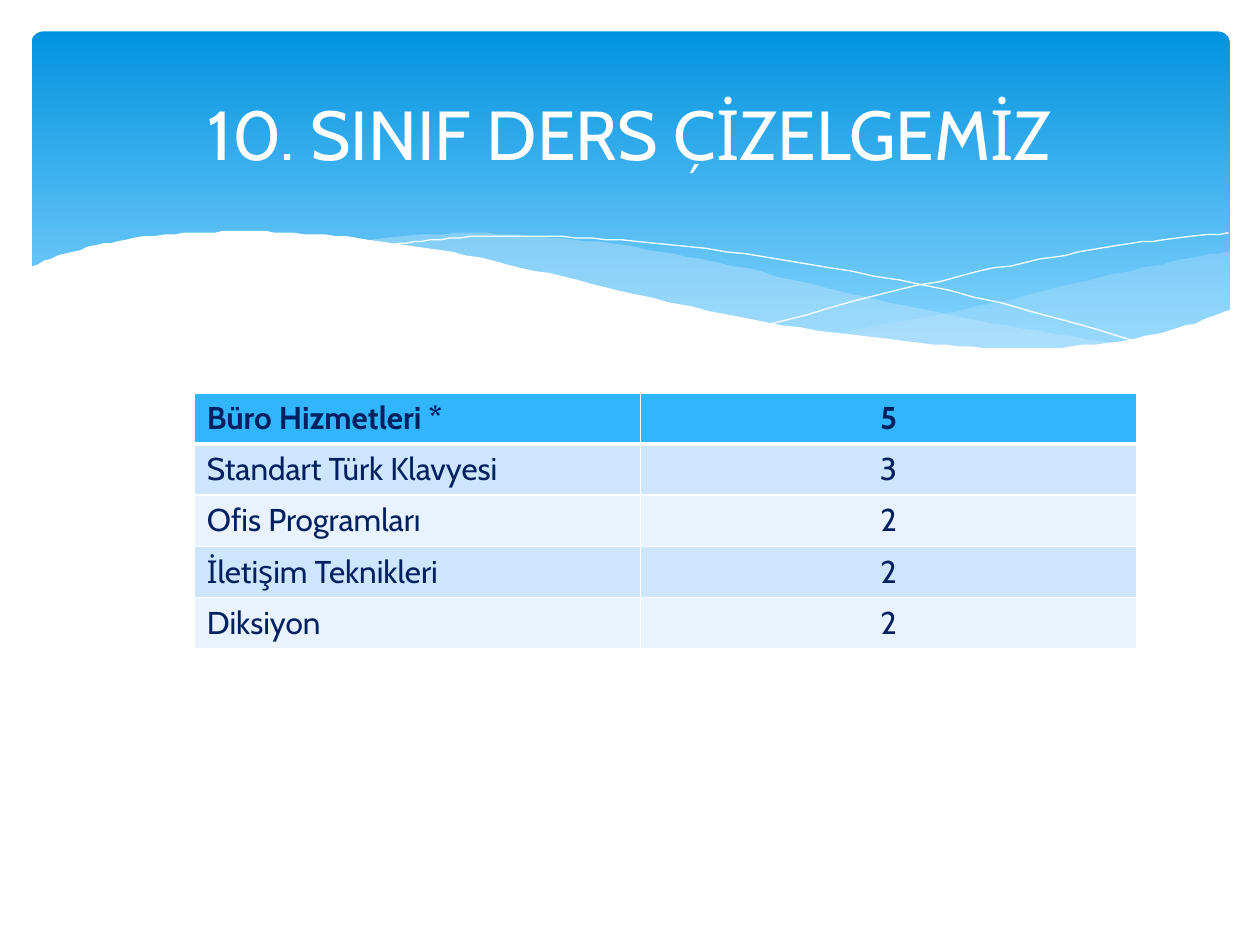
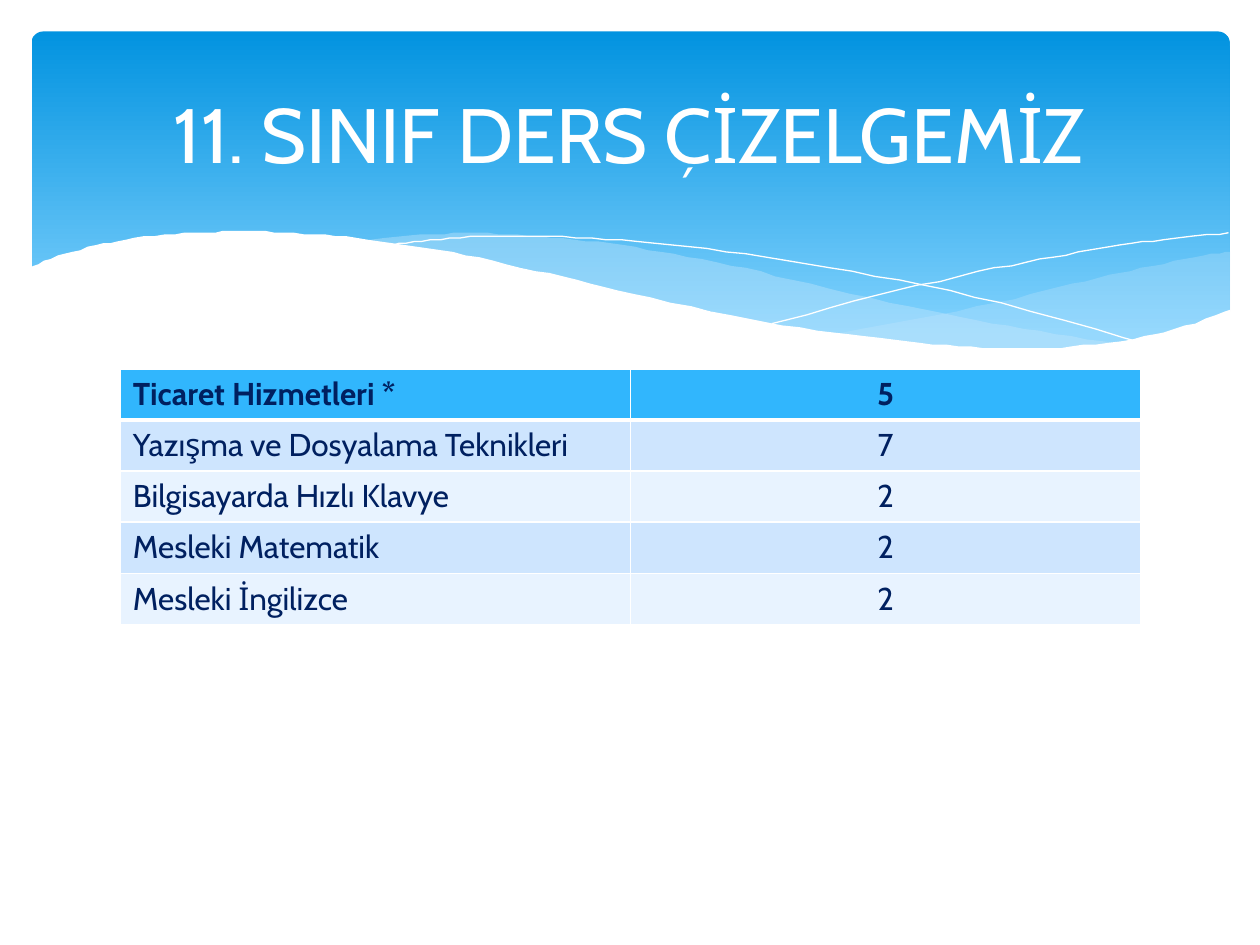
from dataclasses import dataclass

from lxml import etree
from pptx import Presentation
from pptx.dml.color import RGBColor
from pptx.enum.shapes import MSO_SHAPE
from pptx.enum.text import MSO_ANCHOR, PP_ALIGN
from pptx.oxml.ns import qn
from pptx.util import Pt

ROUNDED = MSO_SHAPE.ROUNDED_RECTANGLE
MIDDLE = MSO_ANCHOR.MIDDLE
LEFT, CENTER = PP_ALIGN.LEFT, PP_ALIGN.CENTER

TIMETABLES = [
    {
        "title": "10. SINIF DERS ÇİZELGEMİZ",
        "title_size": 39.6,
        "origin": (111, 224.6),
        "columns": (255, 283.5),
        "lessons": [
            ("Büro Hizmetleri *", "5"),
            ("Standart Türk Klavyesi", "3"),
            ("Ofis Programları", "2"),
            ("İletişim Teknikleri", "2"),
            ("Diksiyon", "2"),
        ],
    },
    {
        "title": "11. SINIF DERS ÇİZELGEMİZ",
        "title_size": 44,
        "origin": (68.8, 210.8),
        "columns": (291.5, 291.5),
        "lessons": [
            ("Ticaret Hizmetleri *", "5"),
            ("Yazışma ve Dosyalama Teknikleri", "7"),
            ("Bilgisayarda Hızlı Klavye", "2"),
            ("Mesleki Matematik", "2"),
            ("Mesleki İngilizce", "2"),
        ],
    },
]


@dataclass(frozen=True)
class Theme:
    font: str = "Cabin"
    body_size: float = 18
    white: str = "FFFFFF"
    band_top: str = "0293E0"
    band_bottom: str = "83D3FE"
    swell: str = "C6E7FC"
    ink: str = "002060"
    header: str = "31B6FD"
    stripes: tuple = ("CEE5FE", "E8F3FF")
    thin_border: float = 1
    header_border: float = 3


THEME = Theme()
SLIDE_SIZE = (720, 540)
BAND = (18, 18, 684.7, 194.4)
BAND_ROUNDING = 0.034
TITLE_BOX = (36, 26.6, 648, 98.6)
ROW_HEIGHT = 29.2
CURVE_STEPS = 5

# Knots of the smooth curves, in points
RIGHT_SWELL = [
    [(702.7, 144), (682.6, 146.9), (652.3, 153.4), (619.9, 160.6),
     (579.6, 170.6), (524.9, 182.2), (475.9, 190.8)],
    [(475.9, 190.8), (507.6, 195.1), (545, 198.7), (578.2, 200.2),
     (614.9, 198.7), (645.8, 194.4), (673.2, 188.6), (702.7, 177.8)],
]
LEFT_SWELL = [
    [(643, 196.6), (602.6, 190.8), (558, 182.9), (508.3, 172.8),
     (452.9, 159.8), (409.7, 149.8), (370.1, 142.6), (334.8, 137.5),
     (302.4, 134.6), (273.6, 133.2), (247.7, 133.9), (205.9, 137.5)],
    [(205.9, 137.5), (246.2, 143.3), (290.9, 151.9), (323.3, 159.8),
     (381.6, 172.8), (432.7, 183.6), (478.8, 191.5), (519.8, 197.3),
     (556.6, 199.4), (589, 200.2), (617, 199.4), (643, 196.6)],
]
FALLING_LINE = [
    [(222.5, 140.4), (241.2, 137.5), (269.3, 135.4), (299.5, 134.6),
     (337.7, 136.1), (383.8, 139.7), (437.8, 146.9), (500.4, 157.7),
     (572.4, 173.5), (653, 195.8)],
]
RISING_LINE = [
    [(441.4, 185), (500.4, 169.2), (558.7, 155.5), (601.9, 146.9),
     (634.3, 141.1), (665.3, 136.8), (702, 133.2)],
]
WHITE_WAVE = [
    [(703.4, 177.1), (676.8, 186.5), (647.3, 193.7), (612, 198),
     (582.5, 199.4), (547.9, 198), (509.8, 194.4), (466.6, 188.6),
     (416.9, 180), (362.2, 167.8), (321.8, 158.4), (281.5, 149),
     (244.8, 141.8), (210.2, 136.8), (180, 133.9), (151.9, 132.5),
     (127.4, 132.5), (105.1, 133.2), (76.3, 136.1), (54.7, 140.4),
     (33.1, 146.2), (16.6, 153.4)],
    [(16.6, 236.9), (703.4, 236.9)],
]
SWELLS = [(RIGHT_SWELL, THEME.swell, 29), (LEFT_SWELL, THEME.swell, 40)]
HAIRLINES = [FALLING_LINE, RISING_LINE]


def rgb(color):
    return RGBColor.from_string(color)


def points(lengths):
    return [Pt(length) for length in lengths]


def smooth(knots):
    """Return points of a Catmull-Rom curve through the knots."""
    padded = [knots[0], *knots, knots[-1]]
    curve = [knots[0]]
    for a, b, c, d in zip(padded, padded[1:], padded[2:], padded[3:]):
        for step in range(1, CURVE_STEPS + 1):
            t = step / CURVE_STEPS
            curve.append(tuple(
                q + t / 2 * (r - p + t * (2 * p - 5 * q + 4 * r - s
                                          + t * (3 * (q - r) + s - p)))
                for p, q, r, s in zip(a, b, c, d)))
    return curve


def draw_outline(slide, edges, closed):
    outline = [point for edge in edges for point in smooth(edge)]
    builder = slide.shapes.build_freeform(*outline[0], scale=Pt(1))
    builder.add_line_segments(outline[1:], close=closed)
    shape = builder.convert_to_shape()
    shape.shadow.inherit = False
    return shape


def draw_area(slide, edges, color, opacity=100):
    area = draw_outline(slide, edges, True)
    area.line.fill.background()
    area.fill.solid()
    area.fill.fore_color.rgb = rgb(color)
    if opacity < 100:
        fill_color = area.element.spPr.find(qn("a:solidFill"))[0]
        etree.SubElement(fill_color, qn("a:alpha"), val=str(opacity * 1000))


def draw_hairline(slide, edges):
    hairline = draw_outline(slide, edges, False)
    hairline.fill.background()
    hairline.line.color.rgb = rgb(THEME.white)
    hairline.line.width = Pt(0)


def draw_header(slide):
    band = slide.shapes.add_shape(ROUNDED, *points(BAND))
    band.adjustments[0] = BAND_ROUNDING
    band.shadow.inherit = False
    band.line.fill.background()
    band.fill.gradient()
    band.fill.gradient_angle = 270
    stops = [(0, THEME.band_top), (0.9, THEME.band_bottom)]
    for stop, (position, color) in zip(band.fill.gradient_stops, stops):
        stop.position = position
        stop.color.rgb = rgb(color)
    for edges, color, opacity in SWELLS:
        draw_area(slide, edges, color, opacity)
    for edges in HAIRLINES:
        draw_hairline(slide, edges)
    draw_area(slide, WHITE_WAVE, THEME.white)


def write(frame, text, align, color, **font_format):
    paragraph = frame.paragraphs[0]
    paragraph.alignment = align
    run = paragraph.add_run()
    run.text = text
    run.font.color.rgb = rgb(color)
    for name, value in {"name": THEME.font, **font_format}.items():
        setattr(run.font, name, value)


def draw_title(slide, title, size):
    frame = slide.shapes.add_textbox(*points(TITLE_BOX)).text_frame
    frame.word_wrap = True
    frame.vertical_anchor = MIDDLE
    write(frame, title, CENTER, THEME.white, size=Pt(size))


def set_borders(cell, widths):
    properties = cell._tc.get_or_add_tcPr()
    for index, (side, width) in enumerate(widths.items()):
        border = etree.Element(qn(f"a:ln{side}"), w=str(Pt(width)))
        fill = etree.SubElement(border, qn("a:solidFill"))
        etree.SubElement(fill, qn("a:srgbClr"), val=THEME.white)
        properties.insert(index, border)


def draw_lessons(slide, lessons, origin, columns):
    size = (sum(columns), ROW_HEIGHT * len(lessons))
    table = slide.shapes.add_table(
        len(lessons), len(columns), *points(origin + size)).table
    for column, width in zip(table.columns, columns):
        column.width = Pt(width)
    for row, lesson in enumerate(lessons):
        table.rows[row].height = Pt(ROW_HEIGHT)
        is_header = row == 0
        fill = THEME.header if is_header else THEME.stripes[(row - 1) % 2]
        borders = dict.fromkeys("LRTB", THEME.thin_border)
        if is_header:
            borders["B"] = THEME.header_border
        elif row == 1:
            borders["T"] = THEME.header_border
        for column, (text, align) in enumerate(zip(lesson, (LEFT, CENTER))):
            cell = table.cell(row, column)
            cell.fill.solid()
            cell.fill.fore_color.rgb = rgb(fill)
            set_borders(cell, borders)
            write(cell.text_frame, text, align, THEME.ink,
                  size=Pt(THEME.body_size), bold=is_header)


def main():
    deck = Presentation()
    deck.slide_width, deck.slide_height = points(SLIDE_SIZE)
    blank = deck.slide_layouts[6]
    for timetable in TIMETABLES:
        slide = deck.slides.add_slide(blank)
        draw_header(slide)
        draw_title(slide, timetable["title"], timetable["title_size"])
        draw_lessons(slide, timetable["lessons"], timetable["origin"],
                     timetable["columns"])
    deck.save("out.pptx")


if __name__ == "__main__":
    main()
